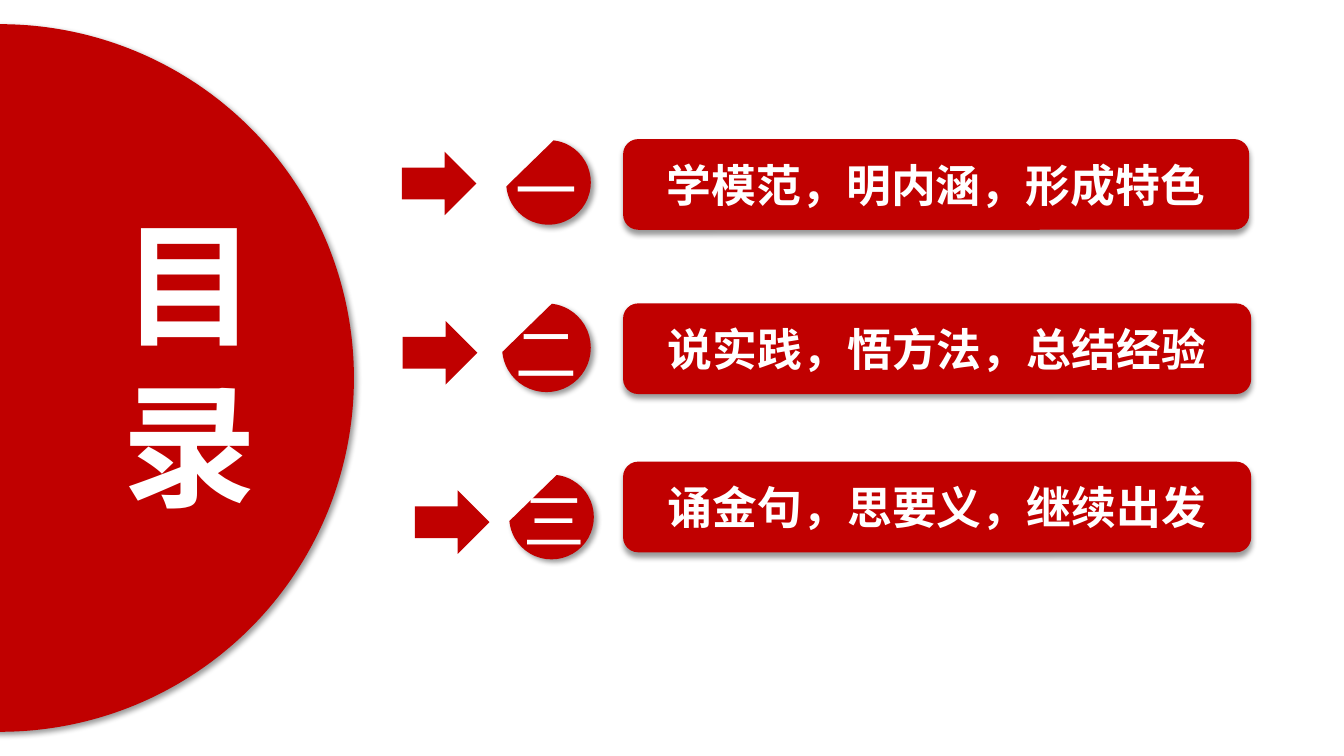
from lxml.etree import SubElement
from pptx import Presentation
from pptx.dml.color import RGBColor
from pptx.enum.shapes import MSO_SHAPE as Shape
from pptx.enum.text import MSO_ANCHOR as Anchor, PP_ALIGN as Align
from pptx.oxml.ns import qn
from pptx.util import Inches, Pt

THEME = {
    "red": RGBColor(0xC0, 0x00, 0x00),
    "white": RGBColor(0xFF, 0xFF, 0xFF),
    "shadow": "000000",
    "display_font": "Noto Sans CJK JP",
    "heading_font": "Noto Sans CJK SC",
    "title_size": Pt(96),
    "numeral_size": Pt(44),
    "heading_size": Pt(32),
}

presentation = Presentation()
presentation.slide_width = Inches(13.33)
presentation.slide_height = Inches(7.5)
slide = presentation.slides.add_slide(presentation.slide_layouts[6])

# Square grid: 160 columns by 90 rows
CELL = presentation.slide_height / 90


def add_red_shape(kind, left, top, width, height, shadow_angle=None):
    box = [round(cells * CELL) for cells in (left, top, width, height)]
    shape = slide.shapes.add_shape(kind, *box)
    shape.shadow.inherit = False
    shape.fill.solid()
    shape.fill.fore_color.rgb = THEME["red"]
    shape.line.fill.background()
    if shadow_angle is not None:
        effects = shape.element.spPr.find(qn("a:effectLst"))
        shadow = SubElement(effects, qn("a:outerShdw"), blurRad=str(Pt(4)), dist=str(Pt(3)),
                            dir=str(shadow_angle * 60000), algn="ctr", rotWithShape="0")
        color = SubElement(shadow, qn("a:srgbClr"), val=THEME["shadow"])
        SubElement(color, qn("a:alpha"), val="40000")
    return shape


def write_text(shape, lines, font_name, frame_format, paragraph_format, font_format):
    frame = shape.text_frame
    for name, value in frame_format.items():
        setattr(frame, name, value)
    frame.text = "\n".join(lines)
    for paragraph in frame.paragraphs:
        for name, value in paragraph_format.items():
            setattr(paragraph, name, value)
        for run in paragraph.runs:
            for name, value in font_format.items():
                setattr(run.font, name, value)
            run.font.color.rgb = THEME["white"]
            run.font.name = font_name
            SubElement(run.font._element, qn("a:ea"), typeface=font_name)


# Half disc with the title
add_red_shape(Shape.OVAL, -42.12, 2.88, 84.24, 84.24, shadow_angle=45)
title = add_red_shape(Shape.RECTANGLE, 13.44, 21.48, 17.4, 40.32)
write_text(title, ["目", "录"], THEME["display_font"],
           {"word_wrap": True, "vertical_anchor": Anchor.TOP,
            "margin_top": Inches(0.21), "margin_bottom": 0},
           {"alignment": Align.CENTER, "line_spacing": Pt(115)},
           {"size": THEME["title_size"], "bold": True})

# Agenda: arrow left, disc (left, top, size), numeral (left, top, width), bar (top, width)
ITEMS = [
    ("一", "学模范，明内涵，形成特色", 48.48, (60.24, 16.68, 10.08), (60.12, 16.92, 10.08), (16.56, 74.52)),
    ("二", "说实践，悟方法，总结经验", 48.6, (59.76, 36.12, 10.56), (60.12, 36.48, 13.68), (36.12, 74.76)),
    ("三", "诵金句，思要义，继续出发", 50.04, (60.6, 56.52, 10.08), (61.08, 56.4, 13.44), (54.96, 74.76)),
]
ARROW_TOP, ARROW_PITCH = 17.4, 20.16
CHORD_ANGLES = (277, 174.5)

for index, (numeral, heading, arrow_left, disc_box, numeral_box, bar_box) in enumerate(ITEMS):
    # Disc with its upper left cut off
    disc_left, disc_top, disc_size = disc_box
    disc = add_red_shape(Shape.CHORD, disc_left, disc_top, disc_size, disc_size, shadow_angle=45)
    for position, angle in enumerate(CHORD_ANGLES):
        disc.adjustments[position] = angle * 0.6

    # Numeral
    box = [round(cells * CELL) for cells in (*numeral_box, 10.08)]
    label = slide.shapes.add_textbox(*box)
    write_text(label, [numeral], THEME["display_font"], {"word_wrap": True},
               {"alignment": Align.LEFT, "line_spacing": Pt(56)},
               {"size": THEME["numeral_size"], "bold": False})

    # Heading bar
    bar_top, bar_width = bar_box
    bar = add_red_shape(Shape.ROUNDED_RECTANGLE, 74.16, bar_top, bar_width, 10.8, shadow_angle=90)
    write_text(bar, [heading], THEME["heading_font"],
               {"word_wrap": True, "vertical_anchor": Anchor.MIDDLE,
                "margin_left": Inches(0.13), "margin_right": Inches(0.13)},
               {"alignment": Align.CENTER},
               {"size": THEME["heading_size"], "bold": True})

    # Arrow pointing right
    arrow = add_red_shape(Shape.DOWN_ARROW, arrow_left, ARROW_TOP + index * ARROW_PITCH, 7.56, 8.88)
    arrow.rotation = 270

presentation.save("out.pptx")
